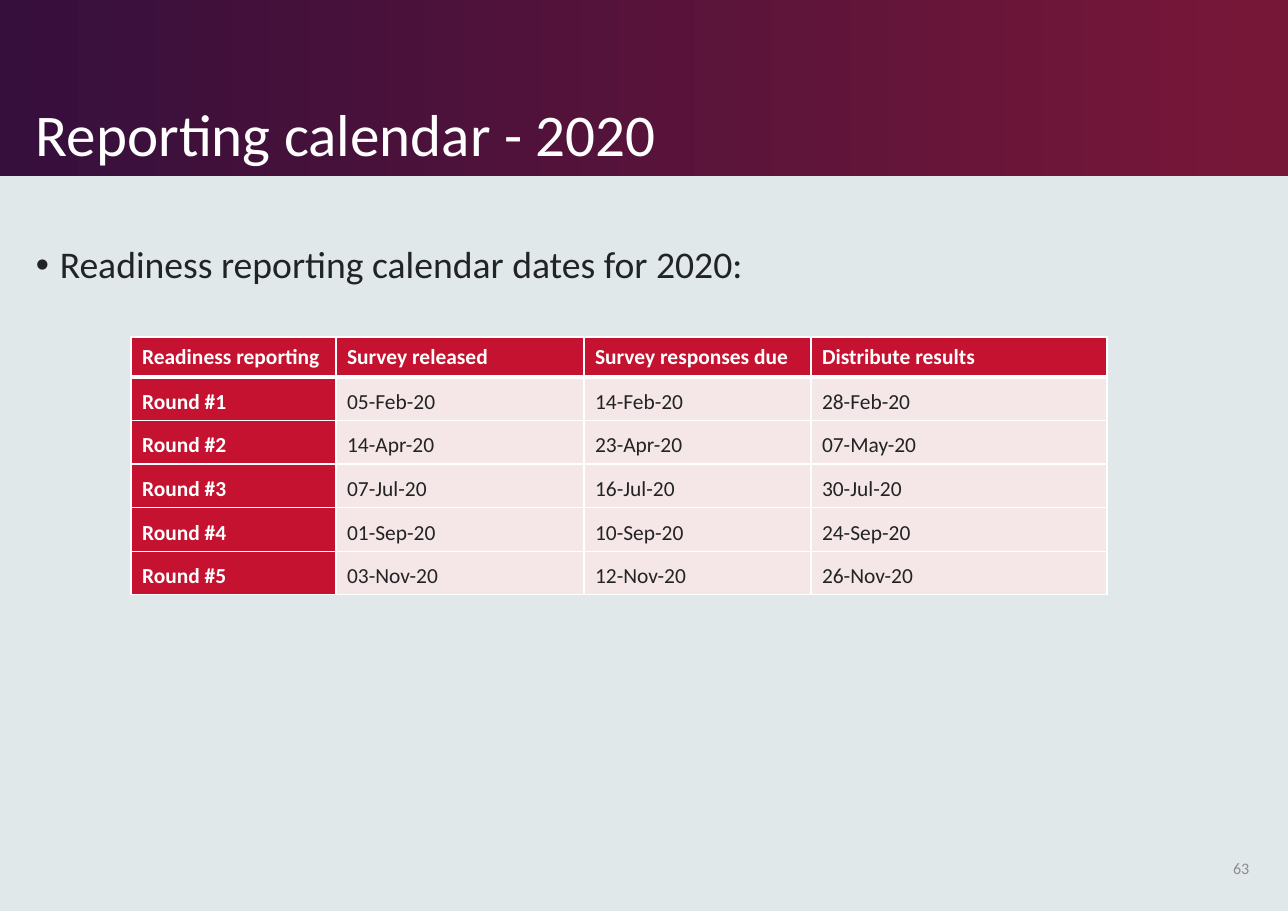
from dataclasses import dataclass

from pptx import Presentation
from pptx import util as u
from pptx.dml.color import RGBColor
from pptx.enum import shapes, text
from pptx.oxml import parse_xml
from pptx.oxml.ns import nsdecls

SCALE = 8298  # EMU in one px


@dataclass(frozen=True)
class Theme:
    font: str = "Calibri"
    back: str = "E0E8EA"
    dark: str = "360F3C"
    wine: str = "771738"
    red: str = "C41230"
    pale: str = "F5E7E8"
    white: str = "FFFFFF"
    ink: str = "222324"
    grey: str = "8D8D8E"
    title: float = 38.6
    body: float = 24.6
    cell: float = 14
    page: float = 10.5


T = Theme()
TOP, MID, LOW = (text.MSO_ANCHOR.TOP, text.MSO_ANCHOR.MIDDLE,
                 text.MSO_ANCHOR.BOTTOM)

HEADS = ["Readiness reporting", "Survey released",
         "Survey responses due", "Distribute results"]
ROUNDS = [
    ["Round #1", "05-Feb-20", "14-Feb-20", "28-Feb-20"],
    ["Round #2", "14-Apr-20", "23-Apr-20", "07-May-20"],
    ["Round #3", "07-Jul-20", "16-Jul-20", "30-Jul-20"],
    ["Round #4", "01-Sep-20", "10-Sep-20", "24-Sep-20"],
    ["Round #5", "03-Nov-20", "12-Nov-20", "26-Nov-20"],
]
WIDTHS = [205, 248, 227, 296]


def px(n):
    return u.Emu(n * SCALE)


def rgb(code):
    return RGBColor.from_string(code)


def add_run(para, words, size, color, bold=False):
    run = para.add_run()
    run.text = words
    font = run.font
    font.name, font.size, font.bold = T.font, u.Pt(size), bold
    font.color.rgb = rgb(color)


def add_text(slide, box, words, size, color, anchor=TOP):
    frame = slide.shapes.add_textbox(*map(px, box)).text_frame
    frame.word_wrap = True
    frame.vertical_anchor = anchor
    para = frame.paragraphs[0]
    add_run(para, words, size, color)
    return para


def add_bullet(para, indent):
    props = para._p.get_or_add_pPr()
    props.set("marL", str(px(indent)))
    props.set("indent", str(-px(indent)))
    for tag in ('buFont %s typeface="Arial"', 'buChar %s char="•"'):
        props.append(parse_xml(f"<a:{tag % nsdecls('a')}/>"))


def add_band(slide, box):
    band = slide.shapes.add_shape(shapes.MSO_SHAPE.RECTANGLE, *map(px, box))
    band.shadow.inherit = False
    band.line.fill.background()
    band.fill.gradient()
    band.fill.gradient_angle = 0
    stops = band.fill.gradient_stops
    for stop, color, place in zip(stops, (T.dark, T.wine), (0, 0.99)):
        stop.color.rgb = rgb(color)
        stop.position = place


def set_edges(cell, top, low):
    props = cell._tc.get_or_add_tcPr()
    for i, (side, width) in enumerate(zip("LRTB", (1, 1, top, low))):
        props.insert(i, parse_xml(
            f'<a:ln{side} {nsdecls("a")} w="{u.Pt(width)}"><a:solidFill>'
            f'<a:srgbClr val="{T.white}"/></a:solidFill></a:ln{side}>'))


def fill_cell(cell, words, row, col):
    head = row == 0
    bold = head or col == 0
    cell.fill.solid()
    cell.fill.fore_color.rgb = rgb(T.red if bold else T.pale)
    cell.vertical_anchor = MID if head else LOW
    para = cell.text_frame.paragraphs[0]
    para.space_before = para.space_after = u.Pt(2)
    add_run(para, words, T.cell, T.white if bold else T.ink, bold)
    set_edges(cell, 3 if row == 1 else 1, 3 if head else 1)


def add_dates(slide, left, top, head, body):
    data = [HEADS] + ROUNDS
    grid = slide.shapes.add_table(
        len(data), len(WIDTHS), px(left), px(top),
        px(sum(WIDTHS)), px(head + body)).table
    for col, width in zip(grid.columns, WIDTHS):
        col.width = px(width)
    for r, line in enumerate(data):
        grid.rows[r].height = px(body) // len(ROUNDS) if r else px(head)
        for c, words in enumerate(line):
            fill_cell(grid.cell(r, c), words, r, c)


def main():
    deck = Presentation()
    deck.slide_width, deck.slide_height = px(1288), px(911)
    slide = deck.slides.add_slide(deck.slide_layouts[6])
    slide.background.fill.solid()
    slide.background.fill.fore_color.rgb = rgb(T.back)

    # Title band
    add_band(slide, (0, 0, 1288, 176))
    title = add_text(slide, (25, 18, 951, 157), "Reporting calendar - 2020",
                     T.title, T.white, LOW)
    title.line_spacing = 0.9

    # Lead bullet
    lead = add_text(slide, (25, 241, 1236, 579),
                    "Readiness reporting calendar dates for 2020:",
                    T.body, T.ink)
    lead.line_spacing = 0.9
    lead.space_before = u.Pt(8.8)
    add_bullet(lead, 24)

    # Page number
    page = add_text(slide, (1200, 844, 60, 48), "63", T.page, T.grey, MID)
    page.alignment = text.PP_ALIGN.RIGHT

    # Calendar table
    add_dates(slide, 131, 337, 40, 218)

    deck.save("out.pptx")


if __name__ == "__main__":
    main()
